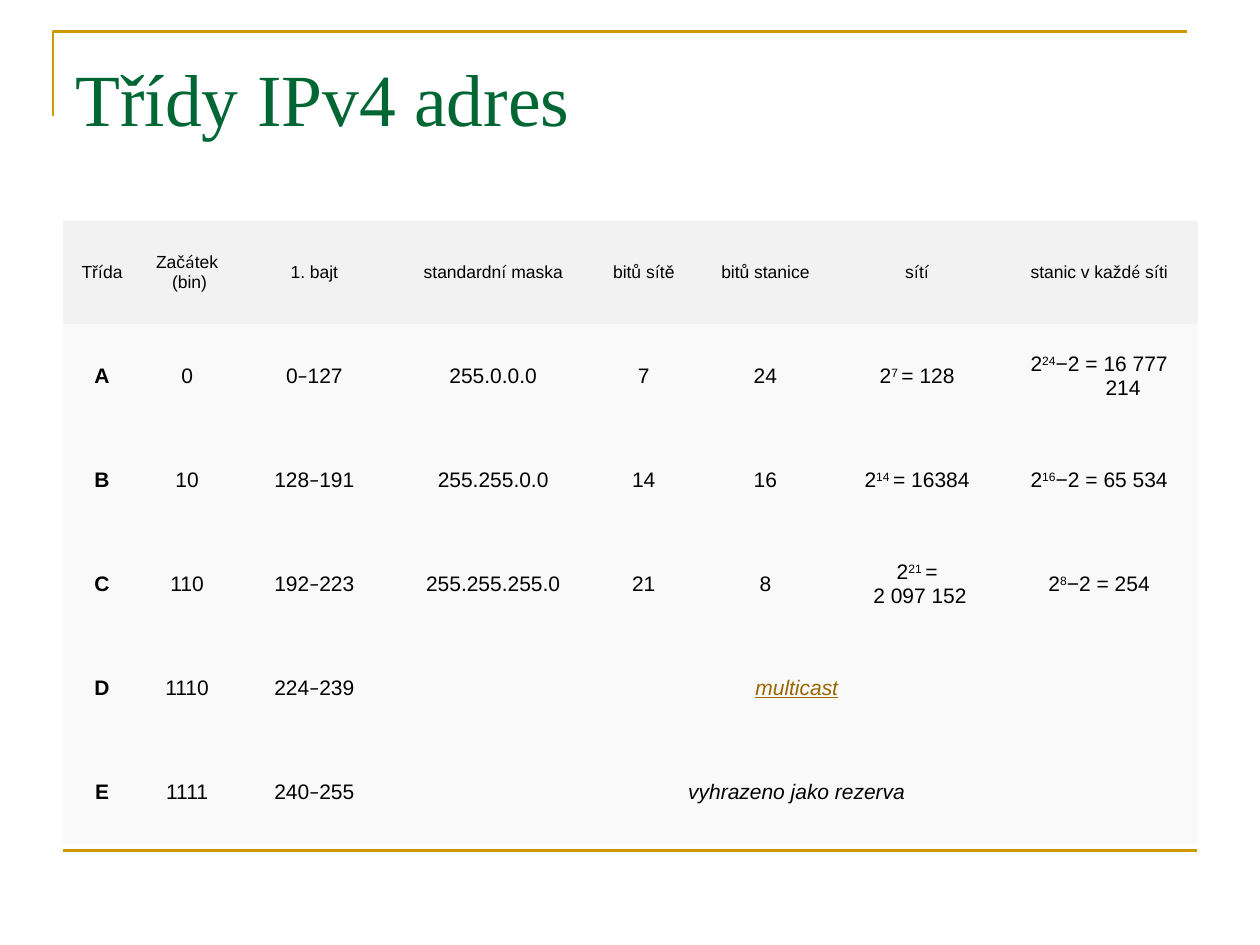
import itertools

import pptx
import pptx.dml.color
import pptx.enum.shapes
import pptx.enum.text
import pptx.oxml.ns
import pptx.util
from pptx.util import Inches

COLORS = {
    "title": "006633",
    "rule": "CC9900",
    "text": "000000",
    "term": "996600",
    "header": "F2F2F2",
    "body": "F9F9F9",
}
NO_GRID_STYLE = "{2D5ABB26-0587-4C30-8999-92F81FD0307C}"
KARLA_CHARS = "áéí–"

COLUMN_WIDTHS = [0.62, 0.73, 1.29, 1.55, 0.84, 1.09, 1.32, 1.57]
# Text between carets is superscript, a newline starts a paragraph.
HEADER = ["Třída", "Začátek\n (bin)", "1. bajt", "standardní maska",
          "bitů sítě", "bitů stanice", "sítí", "stanic v každé síti"]
CLASSES = [
    ["A", "0", "0–127", "255.0.0.0", "7", "24", "2^7 ^= 128", "2^24^−2 = 16 777 214"],
    ["B", "10", "128–191", "255.255.0.0", "14", "16", "2^14 ^= 16384", "2^16^−2 = 65 534"],
    ["C", "110", "192–223", "255.255.255.0", "21", "8", "2^21 ^=\n 2 097 152", "2^8^−2 = 254"],
    ["D", "1110", "224–239", "multicast"],
    ["E", "1111", "240–255", "vyhrazeno jako rezerva"],
]


def rgb(name):
    return pptx.dml.color.RGBColor.from_string(COLORS[name])


class SlideBuilder:
    def __init__(self, prs):
        self.slide = prs.slides.add_slide(prs.slide_layouts[5])
        self.font = "Arial"
        self.accent_font = "Karla"
        self.rule_width = pptx.util.Pt(1.5)

    def title(self, text, left, top, width, height):
        sp = self.slide.shapes.title
        sp.left, sp.top = Inches(left), Inches(top)
        sp.width, sp.height = Inches(width), Inches(height)
        tf = sp.text_frame
        tf.text = text
        tf.vertical_anchor = pptx.enum.text.MSO_ANCHOR.TOP
        tf.margin_top = Inches(0.12)
        p = tf.paragraphs[0]
        p.alignment = pptx.enum.text.PP_ALIGN.LEFT
        p.font.name = "Times New Roman"
        p.font.size = pptx.util.Pt(42)
        p.font.color.rgb = rgb("title")

    def style_rule(self, sp):
        sp.line.color.rgb = rgb("rule")
        sp.line.width = self.rule_width

    def bracket(self, points):
        (x, y), *rest = [(Inches(x), Inches(y)) for x, y in points]
        builder = self.slide.shapes.build_freeform(x, y)
        builder.add_line_segments(rest, close=False)
        sp = builder.convert_to_shape()
        sp.fill.background()
        sp.shadow.inherit = False
        self.style_rule(sp)

    def rule(self, x1, x2, y):
        line = self.slide.shapes.add_connector(
            pptx.enum.shapes.MSO_CONNECTOR.STRAIGHT,
            Inches(x1), Inches(y), Inches(x2), Inches(y))
        line._element.spPr.append(pptx.oxml.parse_xml(
            f"<a:effectLst {pptx.oxml.ns.nsdecls('a')}/>"))
        self.style_rule(line)

    def table(self, left, top, widths, row_height, row_count):
        frame = self.slide.shapes.add_table(
            row_count, len(widths), Inches(left), Inches(top),
            Inches(sum(widths)), Inches(row_height * row_count))
        table = frame.table
        table.first_row = table.horz_banding = False
        table._tbl.tblPr.find(pptx.oxml.ns.qn("a:tableStyleId")).text = NO_GRID_STYLE
        for column, width in zip(table.columns, widths):
            column.width = Inches(width)
        return table

    def cell(self, cell, text, size=12, fill="body", color="text",
             bold=False, italic=False, underline=False):
        cell.fill.solid()
        cell.fill.fore_color.rgb = rgb(fill)
        cell.vertical_anchor = pptx.enum.text.MSO_ANCHOR.MIDDLE
        tf = cell.text_frame
        for i, line in enumerate(text.split("\n")):
            p = tf.add_paragraph() if i else tf.paragraphs[0]
            p.alignment = pptx.enum.text.PP_ALIGN.CENTER
            pPr = p._p.get_or_add_pPr()
            pPr.set("marL", str(Inches(0.38)))
            pPr.set("indent", str(-Inches(0.38)))
            p.font.name = self.font
            p.font.size = pptx.util.Pt(size)
            p.font.color.rgb = rgb(color)
            p.font.bold, p.font.italic, p.font.underline = bold, italic, underline
            self.runs(p, line)

    def runs(self, p, line):
        """Split a line into superscript and accent-font runs."""
        for i, part in enumerate(line.split("^")):
            for accented, chars in itertools.groupby(part, lambda c: c in KARLA_CHARS):
                r = p.add_run()
                r.text = "".join(chars)
                if accented:
                    r.font.name = self.accent_font
                if i % 2:
                    r._r.get_or_add_rPr().set("baseline", "30000")


def main():
    prs = pptx.Presentation()
    prs.slide_width, prs.slide_height = Inches(10), Inches(7.5)
    s = SlideBuilder(prs)
    s.bracket([(0.42, 0.92), (0.42, 0.25), (9.42, 0.25)])
    s.rule(0.5, 9.5, 6.75)
    s.title("Třídy IPv4 adres", 0.5, 0.3, 9, 1.25)

    table = s.table(0.5, 1.75, COLUMN_WIDTHS, 4.95 / 6, 1 + len(CLASSES))
    for col, text in enumerate(HEADER):
        s.cell(table.cell(0, col), text, size=10, fill="header")
    for row, values in enumerate(CLASSES, start=1):
        merged = len(values) < len(HEADER)
        if merged:
            table.cell(row, 3).merge(table.cell(row, len(HEADER) - 1))
        for col, text in enumerate(values):
            term = text == "multicast"
            s.cell(table.cell(row, col), text, bold=col == 0,
                   italic=merged and col == 3, underline=term,
                   color="term" if term else "text")
    prs.save("out.pptx")


if __name__ == "__main__":
    main()
